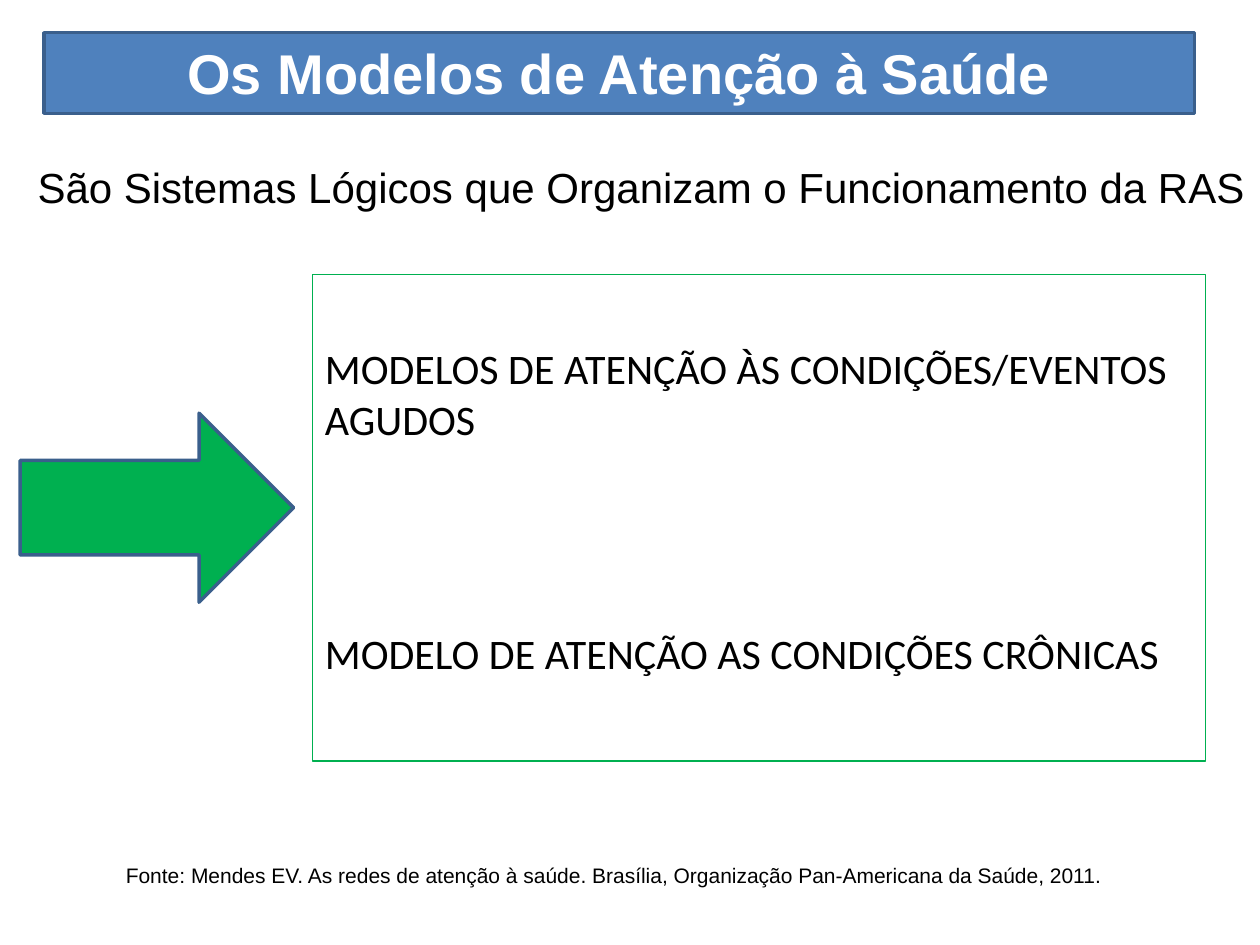
from dataclasses import dataclass

from pptx import Presentation
from pptx.dml.color import RGBColor
from pptx.enum.shapes import MSO_SHAPE
from pptx.enum.text import MSO_ANCHOR, PP_ALIGN
from pptx.util import Inches, Pt

COLORS = {"blue": "4F81BD", "edge": "3A5F8C", "green": "00B050",
          "white": "FFFFFF", "black": "000000"}


@dataclass
class Box:
    left: float
    top: float
    width: float
    height: float

    def place(self) -> list:
        return [Inches(v) for v in (self.left, self.top, self.width, self.height)]


@dataclass
class Style:
    size: int
    font: str = "Arial"
    color: str = "black"
    bold: bool = False
    align: PP_ALIGN = PP_ALIGN.LEFT


def rgb(name: str) -> RGBColor:
    return RGBColor.from_string(COLORS[name])


def add_form(slide, kind: MSO_SHAPE, box: Box, fill: str | None, line: str, width: float):
    form = slide.shapes.add_shape(kind, *box.place())
    form.shadow.inherit = False
    if fill:
        form.fill.solid()
        form.fill.fore_color.rgb = rgb(fill)
    else:
        form.fill.background()
    form.line.color.rgb = rgb(line)
    form.line.width = Pt(width)
    return form


def write(form, lines: list[str], style: Style, gap: float = 0) -> None:
    frame = form.text_frame
    frame.word_wrap = True
    frame.vertical_anchor = MSO_ANCHOR.TOP
    for i, line in enumerate(lines):
        para = frame.add_paragraph() if i else frame.paragraphs[0]
        para.alignment = style.align
        if i:
            para.space_before = Pt(gap)
        run = para.add_run()
        run.text = line
        run.font.size = Pt(style.size)
        run.font.name = style.font
        run.font.bold = style.bold
        run.font.color.rgb = rgb(style.color)


def add_label(slide, box: Box, text: str, style: Style) -> None:
    write(slide.shapes.add_textbox(*box.place()), [text], style)


def main() -> None:
    deck = Presentation()
    deck.slide_width, deck.slide_height = Inches(10), Inches(7.5)
    slide = deck.slides.add_slide(deck.slide_layouts[6])

    # Title bar
    title = add_form(slide, MSO_SHAPE.RECTANGLE, Box(0.35, 0.26, 9.13, 0.64),
                     "blue", "edge", 2)
    write(title, ["Os Modelos de Atenção à Saúde"],
          Style(32, color="white", bold=True, align=PP_ALIGN.CENTER))

    # Source
    add_label(slide, Box(0.9, 6.8, 8.98, 0.3),
              "Fonte: Mendes EV. As redes de atenção à saúde. "
              "Brasília, Organização Pan-Americana da Saúde, 2011.", Style(12))

    # Arrow to the models
    add_form(slide, MSO_SHAPE.RIGHT_ARROW, Box(0.16, 3.28, 2.17, 1.5),
             "green", "edge", 2)

    # Care models
    models = add_form(slide, MSO_SHAPE.RECTANGLE, Box(2.48, 2.18, 7.09, 3.86),
                      None, "green", 0.75)
    models.text_frame.margin_top = Inches(0.54)
    write(models, ["MODELOS DE ATENÇÃO ÀS CONDIÇÕES/EVENTOS AGUDOS",
                   "MODELO DE ATENÇÃO AS CONDIÇÕES CRÔNICAS"],
          Style(24, "Calibri"), gap=105)

    # Lead sentence
    add_label(slide, Box(0.2, 1.23, 10, 0.5),
              "São Sistemas Lógicos que Organizam o Funcionamento da RAS", Style(24))

    deck.save("out.pptx")


if __name__ == "__main__":
    main()
